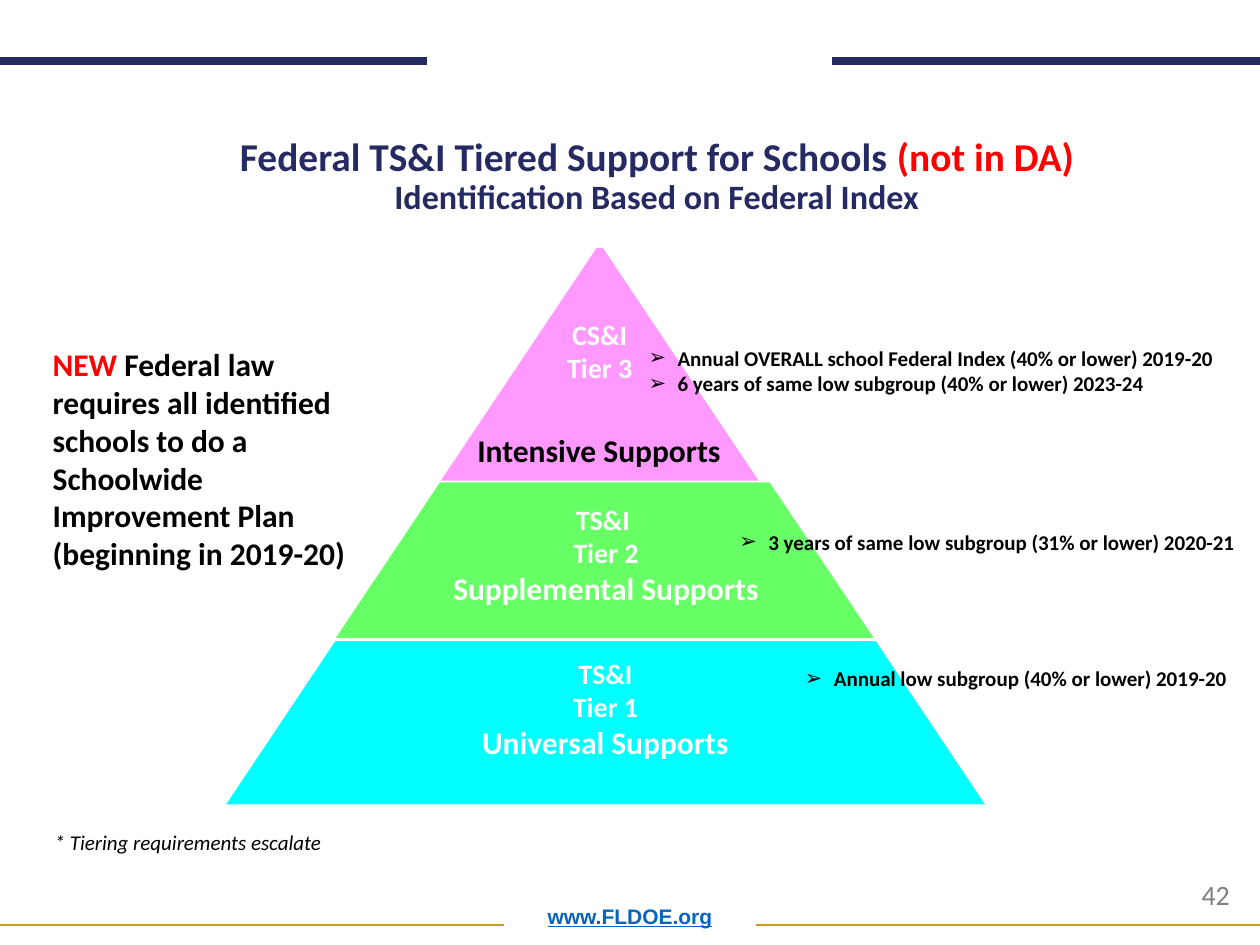
from dataclasses import dataclass

from lxml import etree
from pptx import Presentation
from pptx import util as u
from pptx.dml.color import RGBColor
from pptx.enum import shapes, text
from pptx.oxml.ns import qn


@dataclass(frozen=True)
class Theme:
    font: str = "Calibri"
    link_font: str = "Arial"
    navy: str = "262A63"
    gold: str = "CD9D2C"
    red: str = "FF0000"
    black: str = "000000"
    white: str = "FFFFFF"
    gray: str = "7F7F7F"
    link: str = "0563C1"
    pink: str = "FF99FF"
    green: str = "66FF66"
    cyan: str = "00FFFF"
    title: float = 22.5
    subtitle: float = 19.5
    lead: float = 18
    tier: float = 16
    note: float = 12


LEFT, CENTER, RIGHT = (text.PP_ALIGN.LEFT, text.PP_ALIGN.CENTER,
                       text.PP_ALIGN.RIGHT)
TOP, BOTTOM = text.MSO_ANCHOR.TOP, text.MSO_ANCHOR.BOTTOM
SLOPE = 0.669  # horizontal run of the pyramid's sides per unit of height


def points(*values):
    return [u.Pt(value) for value in values]


class SlideBuilder:
    def __init__(self, page, theme):
        self.page = page
        self.theme = theme

    def span(self, words, size, color, **style):
        """Describe one run: its words and its look."""
        return words, size, color, style

    def fill_text(self, frame, lines, align=LEFT, anchor=TOP,
                  inset=(7.2, 3.6), spacing=None, bullet=False):
        """Fill a text frame; each line is a list of spans."""
        frame.word_wrap = True
        frame.auto_size = text.MSO_AUTO_SIZE.NONE
        frame.vertical_anchor = anchor
        frame.margin_left = frame.margin_right = u.Pt(inset[0])
        frame.margin_top = frame.margin_bottom = u.Pt(inset[1])
        for index, spans in enumerate(lines):
            para = frame.add_paragraph() if index else frame.paragraphs[0]
            para.alignment = align
            if spacing:
                para.line_spacing = spacing
            if bullet:
                self.add_bullet(para)
            for words, size, color, style in spans:
                run = para.add_run()
                run.text = words
                font = run.font
                font.name = style.get("font", self.theme.font)
                font.size = u.Pt(size)
                font.color.rgb = RGBColor.from_string(color)
                font.bold = style.get("bold", True)
                font.italic = style.get("italic", False)
                font.underline = style.get("underline", False)

    def add_bullet(self, para, indent=16.5):
        props = para._p.get_or_add_pPr()
        props.set("marL", str(u.Pt(indent)))
        props.set("indent", str(u.Pt(-indent)))
        etree.SubElement(props, qn("a:buFont")).set("typeface", "Arial")
        etree.SubElement(props, qn("a:buChar")).set("char", "➢")

    def title(self, place, lines):
        box = self.page.shapes.title
        box.left, box.top, box.width, box.height = points(*place)
        self.fill_text(box.text_frame, lines, align=CENTER, spacing=0.9)

    def textbox(self, place, lines, **layout):
        box = self.page.shapes.add_textbox(*points(*place))
        self.fill_text(box.text_frame, lines, **layout)

    def bullets(self, place, items):
        lines = [[self.span(item, self.theme.note, self.theme.black)]
                 for item in items]
        self.textbox(place, lines, bullet=True)

    def rule(self, start, end, y, color, width):
        line = self.page.shapes.add_connector(
            shapes.MSO_CONNECTOR.STRAIGHT, *points(start, y, end, y))
        line.line.color.rgb = RGBColor.from_string(color)
        line.line.width = u.Pt(width)
        etree.SubElement(line._element.spPr, qn("a:effectLst"))

    def tier_band(self, place, color):
        band = self.page.shapes.add_shape(
            shapes.MSO_SHAPE.TRAPEZOID, *points(*place))
        band.adjustments[0] = SLOPE
        band.shadow.inherit = False
        band.fill.solid()
        band.fill.fore_color.rgb = RGBColor.from_string(color)
        band.line.color.rgb = RGBColor.from_string(self.theme.white)
        band.line.width = u.Pt(1)

    def tier_label(self, place, names, support=None):
        theme = self.theme
        lines = [[self.span(name, theme.tier, theme.white)] for name in names]
        if support:
            lines.append([self.span(support, theme.lead, theme.white)])
        self.textbox(place, lines, align=CENTER, inset=(0, 0))


def main():
    deck = Presentation()
    deck.slide_width, deck.slide_height = points(720, 540)
    theme = Theme()
    page = deck.slides.add_slide(deck.slide_layouts[5])
    slide = SlideBuilder(page, theme)
    span = slide.span

    # Header and footer rules
    for start, end in ((0, 244), (475.5, 720)):
        slide.rule(start, end, 34.8, theme.navy, 5)
    for start, end in ((0, 288), (432, 720)):
        slide.rule(start, end, 528.5, theme.gold, 1)

    # Footer
    slide.textbox(
        (49.7, 504, 620.6, 30.2),
        [[span("www.FLDOE.org", theme.note, theme.link,
               font=theme.link_font, underline=True)]],
        align=CENTER, anchor=BOTTOM, spacing=0.9)
    slide.textbox((679.5, 498.2, 37.5, 26.6),
                  [[span("42", theme.tier, theme.gray, bold=False)]])

    # Pyramid, each tier overlapping the one above
    tiers = [
        ((246.2, 141.1, 193, 141.1), theme.pink),
        ((190.8, 275.2, 309.6, 90), theme.green),
        ((128.2, 365.8, 435.6, 94.3), theme.cyan),
    ]
    for place, color in tiers:
        slide.tier_band(place, color)
    slide.tier_label((246.2, 181.2, 193, 40), ["CS&I", "Tier 3"])
    slide.tier_label((245.5, 287, 201.6, 62), ["TS&I ", "Tier 2"],
                     "Supplemental Supports")
    slide.tier_label((204.5, 375, 283, 62), ["TS&I", "Tier 1"],
                     "Universal Supports")

    # Title
    slide.title((121.7, 74.9, 507.6, 38.2), [
        [span("Federal TS&I Tiered Support for Schools ",
              theme.title, theme.navy),
         span("(not in DA)", theme.title, theme.red)],
        [span("Identification Based on Federal Index",
              theme.subtitle, theme.navy)],
    ])

    # Side notes
    slide.textbox((23, 193.7, 188.6, 138.2), [[
        span("NEW ", theme.lead, theme.red),
        span("Federal law requires all identified schools to do a "
             "Schoolwide Improvement Plan (beginning in 2019-20)",
             theme.lead, theme.black)]])
    slide.textbox((7.9, 470.2, 182.9, 21.6), [[
        span("* Tiering requirements escalate", theme.note, theme.black,
             bold=False, italic=True)]], align=RIGHT)

    # Criteria beside each tier
    slide.bullets((363.6, 193.7, 342.7, 36), [
        "Annual OVERALL school Federal Index (40% or lower) 2019-20",
        "6 years of same low subgroup (40% or lower) 2023-24"])
    slide.bullets((415.5, 298.8, 304.5, 21.6),
                  ["3 years of same low subgroup (31% or lower) 2020-21"])
    slide.bullets((452.9, 376.6, 259.9, 21.6),
                  ["Annual low subgroup (40% or lower) 2019-20"])
    slide.textbox((265.7, 242.6, 250.6, 30),
                  [[span("Intensive Supports", theme.lead, theme.black)]])

    deck.save("out.pptx")


if __name__ == "__main__":
    main()
